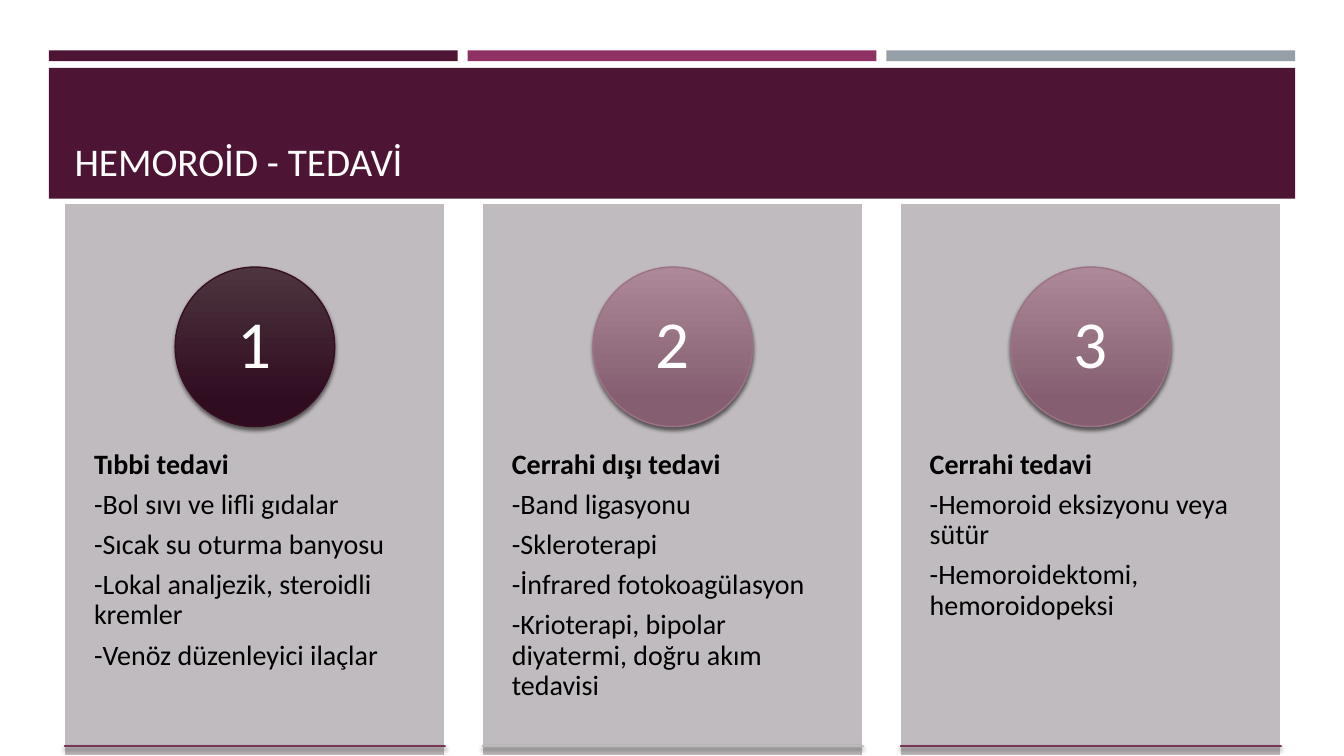
from lxml import etree
from pptx import Presentation
from pptx.dml.color import RGBColor
from pptx.enum.shapes import MSO_SHAPE as Shape
from pptx.enum.text import MSO_ANCHOR as Anchor, PP_ALIGN as Align
from pptx.oxml.ns import qn
from pptx.util import Cm, Pt

FONT = "Calibri"
PLUM, ROSE, STEEL = "4D1434", "903163", "969FA7"
# Gradient top, gradient bottom, outline
DARK = ("4D353F", "300C20", "390F26")
PALE = ("AC8898", "855F71", "9E7286")
WINE = ("884A68", "642C49", "773557")
GREY = ("CECECE", "9C9C9C", "BABABA")

CARDS = [
    (DARK, WINE, "Tıbbi tedavi",
     ["-Bol sıvı ve lifli gıdalar", "-Sıcak su oturma banyosu",
      "-Lokal analjezik, steroidli kremler", "-Venöz düzenleyici ilaçlar"]),
    (PALE, GREY, "Cerrahi dışı tedavi",
     ["-Band ligasyonu", "-Skleroterapi", "-İnfrared fotokoagülasyon",
      "-Krioterapi, bipolar diyatermi, doğru akım tedavisi"]),
    (PALE, WINE, "Cerrahi tedavi",
     ["-Hemoroid eksizyonu veya sütür", "-Hemoroidektomi, hemoroidopeksi"]),
]


def rgb(code):
    return RGBColor.from_string(code)


def add_shape(slide, kind, x, y, w, h):
    shape = slide.shapes.add_shape(kind, Cm(x), Cm(y), Cm(w), Cm(h))
    shape.shadow.inherit = False
    return shape


def add_rect(slide, x, y, w, h, color):
    rect = add_shape(slide, Shape.RECTANGLE, x, y, w, h)
    rect.fill.solid()
    rect.fill.fore_color.rgb = rgb(color)
    rect.line.fill.background()
    return rect


def add_glossy(slide, kind, x, y, w, h, tones):
    """Add a shape with a downward gradient, an outline and a soft shadow."""
    shape = add_shape(slide, kind, x, y, w, h)
    shape.fill.gradient()
    shape.fill.gradient_angle = 270
    for stop, color, pos in zip(shape.fill.gradient_stops, tones, (0, 0.84)):
        stop.color.rgb = rgb(color)
        stop.position = pos
    shape.line.color.rgb = rgb(tones[2])
    shape.line.width = Pt(1)
    effects = shape.element.spPr.find(qn("a:effectLst"))
    shadow = etree.SubElement(
        effects, qn("a:outerShdw"), blurRad=str(Pt(3)), dist=str(Pt(2)),
        dir="5400000", algn="ctr", rotWithShape="0")
    black = etree.SubElement(shadow, qn("a:srgbClr"), val="000000")
    etree.SubElement(black, qn("a:alpha"), val="55000")
    return shape


def add_run(para, text, size, color, bold=False):
    run = para.add_run()
    run.text = text
    font = run.font
    font.name, font.size, font.bold = FONT, Pt(size), bold
    font.color.rgb = rgb(color)


def set_frame(shape, anchor, side, edge):
    frame = shape.text_frame
    frame.word_wrap = True
    frame.vertical_anchor = anchor
    frame.margin_left = frame.margin_right = Cm(side)
    frame.margin_top = frame.margin_bottom = Cm(edge)
    return frame


def add_header(slide, x, y, w):
    gap = 0.25
    bar = (w - 2 * gap) / 3
    for i, color in enumerate((PLUM, ROSE, STEEL)):
        add_rect(slide, x + i * (bar + gap), y, bar, 0.27, color)
    add_rect(slide, x, y + 0.44, w, 3.3, PLUM)
    box = slide.shapes.add_textbox(Cm(x + 0.4), Cm(y + 0.69),
                                   Cm(w - 0.8), Cm(2.82))
    frame = set_frame(box, Anchor.BOTTOM, 0.25, 0.13)
    add_run(frame.paragraphs[0], "HEMOROİD - TEDAVİ", 28, "FFFEFF")


def add_card(slide, x, y, w, h, num, disc, rule, head, items):
    card = add_rect(slide, x, y, w, h, "BAB4B7")
    tint = card.element.spPr.find(qn("a:solidFill"))[0]
    etree.SubElement(tint, qn("a:alpha"), val="90000")
    card.line.color.rgb = rgb("FFFFFF")
    card.line.width = Pt(1)

    box = slide.shapes.add_textbox(Cm(x), Cm(y + 5.31), Cm(w), Cm(8.36))
    frame = set_frame(box, Anchor.TOP, 0.74, 0.91)
    for i, text in enumerate([head] + items):
        para = frame.add_paragraph() if i else frame.paragraphs[0]
        para.line_spacing = 0.9
        para.space_after = Pt(7)
        add_run(para, text, 20, "000000", bold=i == 0)

    size = 4.1 if w > 10 else 4.02
    ball = add_glossy(slide, Shape.OVAL, x + (w - size) / 2, y + 1.6,
                      size, size, disc)
    para = set_frame(ball, Anchor.MIDDLE, 0.3, 0.03).paragraphs[0]
    para.alignment = Align.CENTER
    para.line_spacing = 0.9
    add_run(para, str(num), 48, "FFFFFF")
    add_glossy(slide, Shape.RECTANGLE, x, y + h - 0.25, w, 0.01, rule)


def main():
    deck = Presentation()
    deck.slide_width, deck.slide_height = Cm(33.87), Cm(19.05)
    slide = deck.slides.add_slide(deck.slide_layouts[6])
    add_header(slide, 1.23, 1.27, 31.41)
    for i, card in enumerate(CARDS):
        add_card(slide, 1.63 + i * 10.53, 5.13, 9.59, 13.92, i + 1, *card)
    deck.save("out.pptx")


if __name__ == "__main__":
    main()
